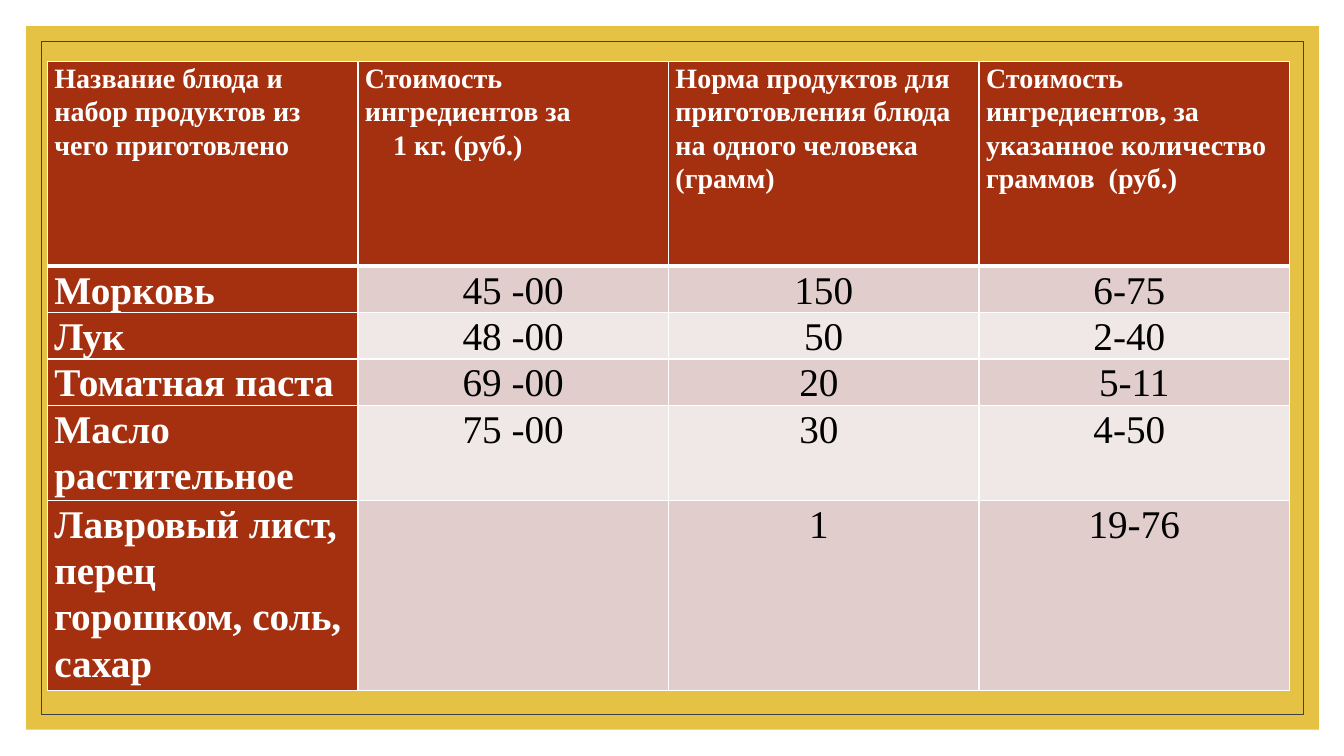
from pptx import Presentation
from pptx.dml.color import RGBColor
from pptx.enum.shapes import MSO_SHAPE as Shape
from pptx.enum.text import PP_ALIGN as Align
from pptx.oxml import parse_xml
from pptx.oxml.ns import nsdecls
from pptx.util import Inches, Pt

COLORS = {
    "gold": "E5C243",
    "frame": "404040",
    "rust": "A5300F",
    "band_dark": "E1CDCC",
    "band_light": "F0E8E7",
    "white": "FFFFFF",
    "black": "000000",
}
FONT = "Times New Roman"
COLUMN_WIDTH = 3.08
ROW_HEIGHTS = [2.03, 0.46, 0.46, 0.46, 0.94, 1.89]
SECOND_LINE_INDENT = 0.28
ROWS = [
    [
        "Название блюда и набор продуктов из чего приготовлено",
        "Стоимость ингредиентов за\n1 кг. (руб.)",
        "Норма продуктов для приготовления блюда на одного человека (грамм)",
        "Стоимость ингредиентов, за указанное количество граммов  (руб.)",
    ],
    ["Морковь", "45 -00", "150", "6-75 "],
    ["Лук", "48 -00", " 50 ", "2-40 "],
    ["Томатная паста", "69 -00", "20 ", "5-11"],
    ["Масло растительное", "75 -00", "30 ", "4-50 "],
    ["Лавровый лист, перец горошком, соль, сахар", "", "1 ", "19-76"],
]


def color(name):
    return RGBColor.from_string(COLORS[name])


def add_rectangle(slide, left, top, width, height, fill=None, line=None):
    shape = slide.shapes.add_shape(
        Shape.RECTANGLE, Inches(left), Inches(top), Inches(width), Inches(height)
    )
    shape.shadow.inherit = False
    if fill:
        shape.fill.solid()
        shape.fill.fore_color.rgb = color(fill)
    else:
        shape.fill.background()
    if line:
        shape.line.color.rgb = color(line)
        shape.line.width = Pt(0.5)
    else:
        shape.line.fill.background()


def set_borders(cell, widths):
    """Draw white borders; widths maps a side (L, R, T, B) to points."""
    properties = cell._tc.get_or_add_tcPr()
    for side, width in widths.items():
        properties.append(parse_xml(
            f'<a:ln{side} {nsdecls("a")} w="{Pt(width)}"><a:solidFill>'
            f'<a:srgbClr val="{COLORS["white"]}"/></a:solidFill></a:ln{side}>'
        ))


def write_cell(cell, text, size, is_heading):
    cell.text = text
    font_format = {"name": FONT, "size": Pt(size), "bold": is_heading}
    for index, paragraph in enumerate(cell.text_frame.paragraphs):
        paragraph.line_spacing = 1.07
        paragraph.alignment = Align.LEFT if is_heading else Align.CENTER
        if index:
            indent = Inches(SECOND_LINE_INDENT)
            paragraph._p.get_or_add_pPr().set("marL", str(indent))
        for run in paragraph.runs:
            for attribute, value in font_format.items():
                setattr(run.font, attribute, value)
            run.font.color.rgb = color("white" if is_heading else "black")


def format_cell(cell, row, column):
    margins = {"margin_left": 0.07, "margin_right": 0.07,
               "margin_top": 0, "margin_bottom": 0}
    for attribute, value in margins.items():
        setattr(cell, attribute, Inches(value))
    set_borders(cell, {"L": 1, "R": 1,
                       "T": 3 if row == 1 else 1,
                       "B": 3 if row == 0 else 1})
    band = "band_dark" if row % 2 else "band_light"
    cell.fill.solid()
    cell.fill.fore_color.rgb = color("rust" if row == 0 or column == 0 else band)


def add_price_table(slide, left, top):
    column_count = len(ROWS[0])
    table = slide.shapes.add_table(
        len(ROWS), column_count, Inches(left), Inches(top),
        Inches(COLUMN_WIDTH * column_count), Inches(sum(ROW_HEIGHTS)),
    ).table
    for table_column in table.columns:
        table_column.width = Inches(COLUMN_WIDTH)
    for row, (height, texts) in enumerate(zip(ROW_HEIGHTS, ROWS)):
        table.rows[row].height = Inches(height)
        for column, text in enumerate(texts):
            cell = table.cell(row, column)
            format_cell(cell, row, column)
            write_cell(cell, text, 28 if row else 20, row == 0 or column == 0)


def main():
    presentation = Presentation()
    presentation.slide_width = Inches(13.33)
    presentation.slide_height = Inches(7.5)
    slide = presentation.slides.add_slide(presentation.slide_layouts[6])
    add_rectangle(slide, 0.26, 0.26, 12.82, 6.98, fill="gold")
    add_rectangle(slide, 0.41, 0.41, 12.52, 6.68, line="frame")
    add_price_table(slide, 0.47, 0.61)
    presentation.save("out.pptx")


if __name__ == "__main__":
    main()
